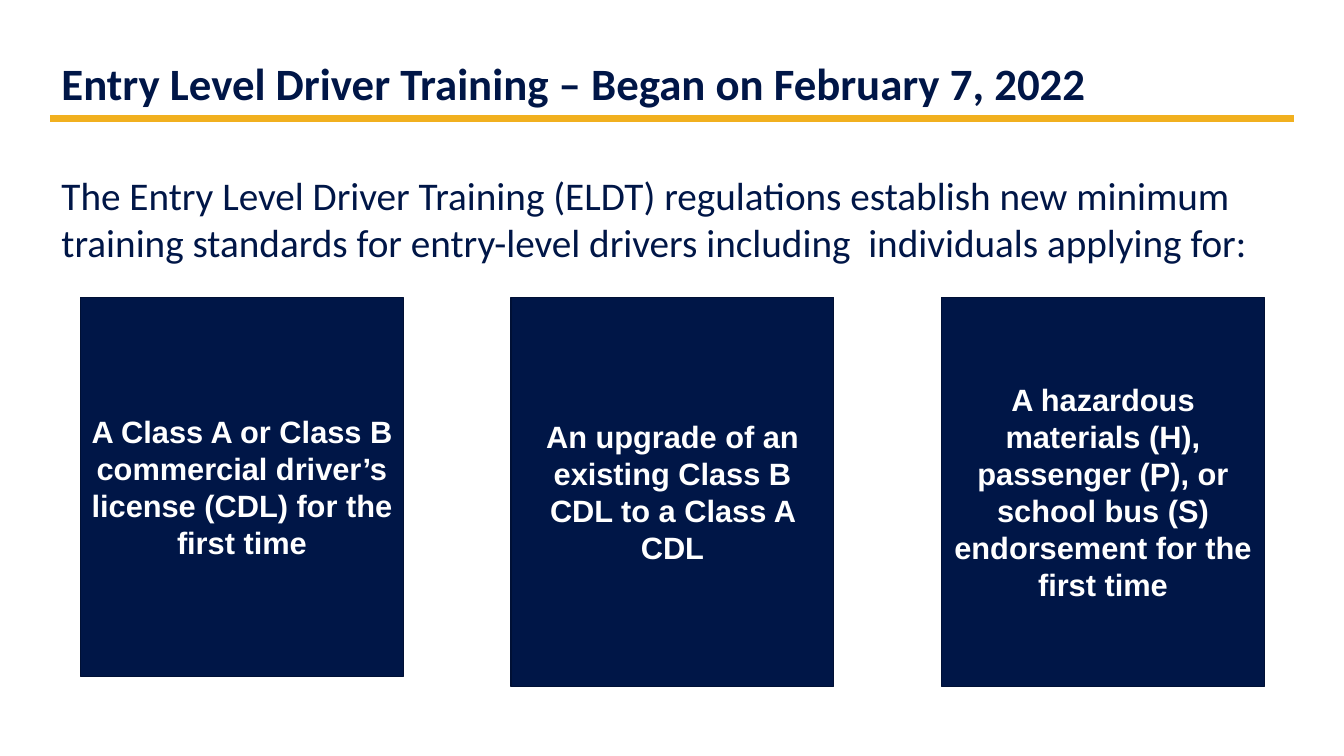
from lxml import etree
from pptx import Presentation
from pptx import util as u
from pptx.dml.color import RGBColor
from pptx.enum import shapes, text
from pptx.oxml.ns import qn

NAVY, EDGE, GOLD, WHITE = "001647", "001035", "F1B01F", "FFFFFF"


def hue(code):
    return RGBColor.from_string(code)


class Deck:
    """Holds the style and the current slide, and adds each kind of element."""

    def __init__(self):
        self.file = Presentation()
        self.file.slide_width = u.Inches(13.33)
        self.file.slide_height = u.Inches(7.5)
        self.slide = self.file.slides.add_slide(self.file.slide_layouts[1])

    def label(self, shape, words, size, color, face, bold, align, anchor):
        frame = shape.text_frame
        frame.text = words
        frame.word_wrap = True
        frame.auto_size = text.MSO_AUTO_SIZE.NONE
        frame.vertical_anchor = anchor
        para = frame.paragraphs[0]
        para.alignment = align
        para.space_before = u.Pt(0)
        font = para.font
        font.size, font.name, font.bold = u.Pt(size), face, bold
        font.color.rgb = hue(color)
        return para

    def place(self, shape, left, top, width, height):
        shape.left, shape.top = u.Inches(left), u.Inches(top)
        shape.width, shape.height = u.Inches(width), u.Inches(height)

    def head(self, words, *box):
        title = self.slide.shapes.title
        self.place(title, *box)
        self.label(title, words, 32, NAVY, "Calibri", True,
                   text.PP_ALIGN.LEFT, text.MSO_ANCHOR.TOP)

    def body(self, words, *box):
        body = self.slide.placeholders[1]
        self.place(body, *box)
        para = self.label(body, words, 28, NAVY, "Calibri", False,
                          text.PP_ALIGN.LEFT, text.MSO_ANCHOR.TOP)
        props = para._p.get_or_add_pPr()
        props.set("marL", "0")
        props.set("indent", "0")
        props.find(qn("a:defRPr")).addprevious(
            etree.Element(qn("a:buNone")))

    def rule(self, left, right, top):
        line = self.slide.shapes.add_connector(
            shapes.MSO_CONNECTOR.STRAIGHT, u.Inches(left), u.Inches(top),
            u.Inches(right), u.Inches(top))
        line.line.color.rgb = hue(GOLD)
        line.line.width = u.Pt(5)
        etree.SubElement(line._element.spPr, qn("a:effectLst"))

    def card(self, words, *box):
        card = self.slide.shapes.add_shape(
            shapes.MSO_SHAPE.RECTANGLE, *map(u.Inches, box))
        card.shadow.inherit = False
        card.fill.solid()
        card.fill.fore_color.rgb = hue(NAVY)
        card.line.color.rgb = hue(EDGE)
        card.line.width = u.Pt(1)
        self.label(card, words, 22, WHITE, "Arial", True,
                   text.PP_ALIGN.CENTER, text.MSO_ANCHOR.MIDDLE)


def main():
    deck = Deck()
    deck.rule(0.5, 12.83, 1.18)
    deck.head("Entry Level Driver Training – Began on February 7, 2022",
              0.51, 0.5, 12.54, 0.65)
    deck.body("The Entry Level Driver Training (ELDT) regulations establish "
              "new minimum training standards for entry-level drivers "
              "including  individuals applying for:",
              0.51, 1.65, 12.54, 1.1)
    cards = [
        ("A Class A or Class B commercial driver’s license (CDL) "
         "for the first time", 3.76),
        ("An upgrade of an existing Class B CDL to a Class A CDL", 3.86),
        ("A hazardous materials (H), passenger (P), or school bus (S) "
         "endorsement for the first time", 3.86),
    ]
    for i, (words, height) in enumerate(cards):
        deck.card(words, 0.8 + 4.27 * i, 2.95, 3.2, height)
    deck.file.save("out.pptx")


if __name__ == "__main__":
    main()
